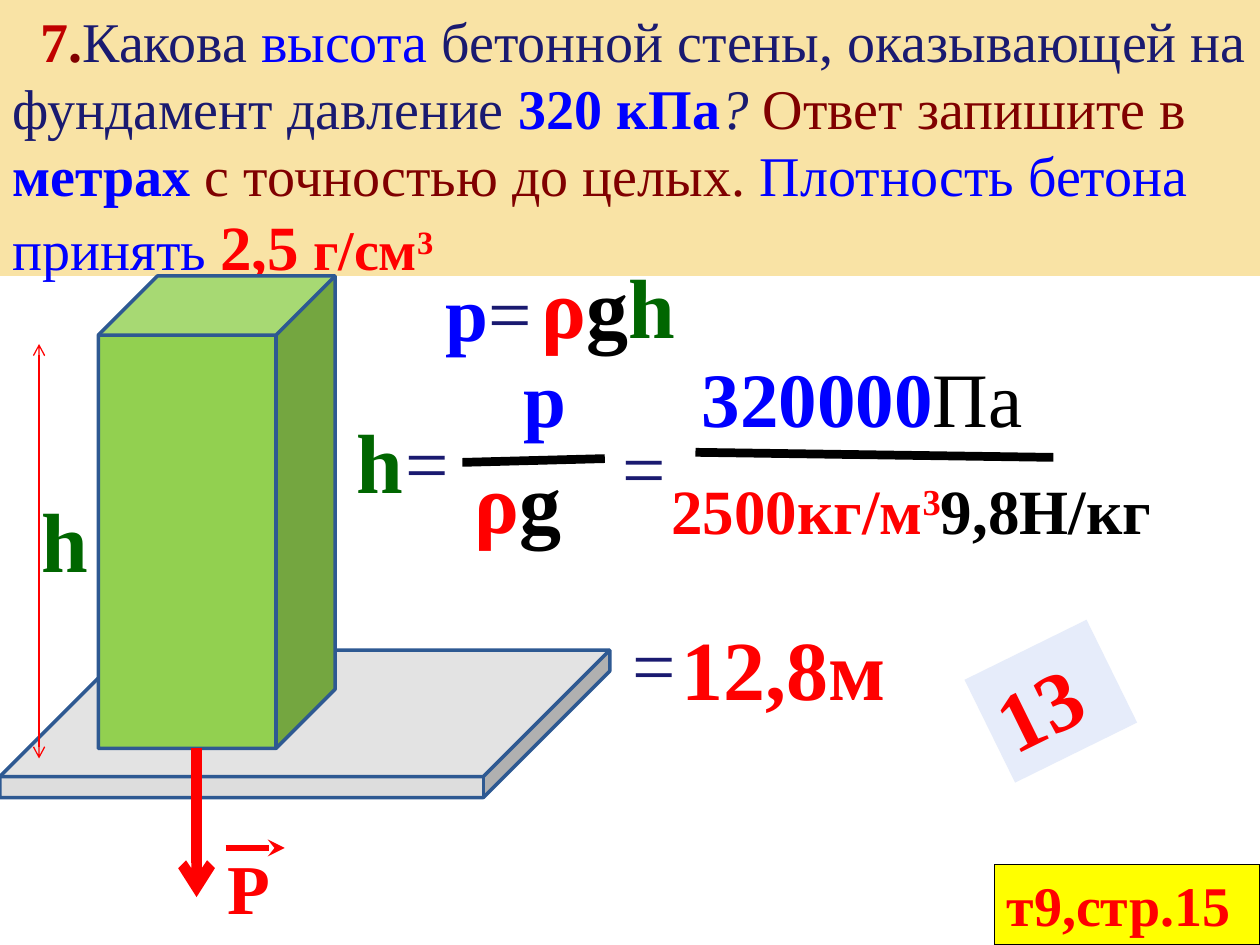
from lxml import etree
from pptx import Presentation
from pptx.dml.color import RGBColor
from pptx.enum import shapes, text
from pptx.oxml.ns import qn
from pptx.util import Inches, Pt

FONT = "Times New Roman"
RED = RGBColor(0xFF, 0x00, 0x00)
DARK_RED = RGBColor(0xC0, 0x00, 0x00)
MAROON = RGBColor(0x80, 0x00, 0x00)
BLUE = RGBColor(0x00, 0x00, 0xFF)
NAVY = RGBColor(0x1A, 0x1A, 0x70)
GREEN = RGBColor(0x00, 0x66, 0x00)
BLACK = RGBColor(0x00, 0x00, 0x00)
SAND = RGBColor(0xF9, 0xE3, 0xA5)
GREY = RGBColor(0xDD, 0xDD, 0xDD)
LIME = RGBColor(0x92, 0xD0, 0x50)
STEEL = RGBColor(0x2E, 0x59, 0x92)
PALE_BLUE = RGBColor(0xE6, 0xEC, 0xFA)
YELLOW = RGBColor(0xFF, 0xFF, 0x00)


def fill_text(shape, runs, size, anchor=text.MSO_ANCHOR.TOP):
    frame = shape.text_frame
    frame.word_wrap = True
    frame.vertical_anchor = anchor
    paragraph = frame.paragraphs[0]
    paragraph.alignment = text.PP_ALIGN.LEFT
    paragraph.font.name = FONT
    paragraph.font.size = Pt(size)
    for words, color, style in runs:
        run = paragraph.add_run()
        run.text = words
        run.font.name = FONT
        run.font.size = Pt(36 if "large" in style else size)
        run.font.color.rgb = color
        run.font.bold = "bold" in style
        run.font.italic = "italic" in style
        if "super" in style:
            run.font._element.set("baseline", "30000")
    return paragraph


def add_label(parent, left, top, width, height, size, *runs):
    box = parent.add_textbox(Inches(left), Inches(top), Inches(width), Inches(height))
    box.text_frame.auto_size = text.MSO_AUTO_SIZE.SHAPE_TO_FIT_TEXT
    return fill_text(box, runs, size)


def add_block(parent, kind, left, top, width, height, fill, line=None, weight=0.75):
    shape = parent.add_shape(
        kind, Inches(left), Inches(top), Inches(width), Inches(height))
    shape.shadow.inherit = False
    shape.fill.solid()
    shape.fill.fore_color.rgb = fill
    if line is None:
        shape.line.fill.background()
    else:
        shape.line.color.rgb = line
        shape.line.width = Pt(weight)
    return shape


def add_line(parent, x1, y1, x2, y2, color, weight, head=None, tail=None):
    line = parent.add_connector(
        shapes.MSO_CONNECTOR.STRAIGHT, Inches(x1), Inches(y1), Inches(x2), Inches(y2))
    line.line.color.rgb = color
    line.line.width = Pt(weight)
    properties = line._element.spPr
    outline = properties.find(qn("a:ln"))
    for tag, arrow in (("a:headEnd", head), ("a:tailEnd", tail)):
        if arrow:
            etree.SubElement(outline, qn(tag)).set("type", arrow)
    etree.SubElement(properties, qn("a:effectLst"))


def add_question(parent):
    banner = add_block(parent, shapes.MSO_SHAPE.RECTANGLE, 0, 0, 10, 2.19, SAND)
    paragraph = fill_text(banner, [
        ("  ", BLUE, ""),
        ("7", DARK_RED, "bold"),
        (".", MAROON, "bold"),
        ("Какова ", NAVY, ""),
        ("высота ", BLUE, ""),
        ("бетонной стены, оказывающей на фундамент давление ", NAVY, ""),
        ("320 кПа", BLUE, "bold"),
        ("?", NAVY, "italic"),
        (" Ответ запишите в", MAROON, ""),
        (" метрах", BLUE, "bold"),
        (" с точностью до целых.", MAROON, ""),
        (" Плотность бетона принять ", BLUE, ""),
        ("2,5", RED, "bold large"),
        (" ", RED, ""),
        ("г/см", RED, "bold"),
        ("3", RED, "bold super"),
    ], 32)
    paragraph.space_before = Pt(5)
    paragraph.space_after = Pt(10)


def add_wall(parent):
    cube = shapes.MSO_SHAPE.CUBE
    slab = add_block(parent, cube, 0, 5.16, 4.84, 1.17, GREY, STEEL, 2)
    slab.adjustments[0] = 0.858
    add_block(parent, cube, 0.78, 2.19, 1.88, 3.75, LIME, STEEL, 2)
    add_line(parent, 1.56, 5.94, 1.56, 7.12, RED, 6, tail="arrow")
    force = parent.add_group_shape().shapes
    add_label(force, 1.71, 6.65, 0.86, 0.77, 40, ("Р", RED, "bold")).space_after = Pt(10)
    add_line(force, 1.79, 6.73, 2.26, 6.73, RED, 3.25, tail="stealth")
    add_line(parent, 0.31, 2.73, 0.31, 6.02, RED, 0.75, "arrow", "arrow")
    add_label(parent, 0.23, 3.83, 0.78, 0.91, 48, ("h", GREEN, "bold"))


def add_solution(parent):
    pressure = ("p", BLUE, "bold")
    density = ("ρ", RED, "bold")
    gravity = ("g", BLACK, "bold")
    height = ("h", GREEN, "bold")
    equals = ("=", NAVY, "")

    add_label(parent, 3.44, 2.05, 1.02, 0.84, 44, pressure, equals)
    add_label(parent, 4.2, 1.97, 1.41, 0.91, 48, density, gravity, height)
    for left, top in ((3.12, 3.24), (4.84, 3.28), (4.92, 4.84)):
        add_label(parent, left, top, 0.63, 0.84, 44, equals)
    add_label(parent, 2.73, 3.2, 0.94, 0.91, 48, height)
    add_label(parent, 4.06, 2.73, 1.02, 0.84, 44, pressure)
    add_line(parent, 3.67, 3.67, 4.8, 3.64, BLACK, 5)
    add_label(parent, 3.67, 3.52, 1.09, 0.91, 48, density, gravity)
    add_label(parent, 5.47, 2.73, 3.2, 0.84, 44,
              ("320000", BLUE, "bold"), ("Па", BLACK, ""))
    add_line(parent, 5.52, 3.59, 8.36, 3.63, BLACK, 5)
    add_label(parent, 5.23, 3.69, 4.3, 0.71, 36, ("2500кг/м", RED, "bold"),
              ("3", RED, "bold super"), ("9,8Н/кг", BLACK, "bold"))
    add_label(parent, 5.31, 4.84, 2.03, 0.91, 48, ("12,8м", RED, "bold"))


def add_answer(parent):
    rectangle = shapes.MSO_SHAPE.RECTANGLE
    answer = add_block(parent, rectangle, 7.8, 5.11, 1.08, 0.91, PALE_BLUE)
    answer.rotation = 333.8
    fill_text(answer, [("13", RED, "bold")], 48)
    reference = add_block(parent, rectangle, 7.89, 6.86, 2.11, 0.64, YELLOW, BLACK)
    fill_text(reference, [("т9,стр.15", RED, "bold")], 32)


def main():
    presentation = Presentation()
    presentation.slide_width = Inches(10)
    presentation.slide_height = Inches(7.5)
    slide = presentation.slides.add_slide(presentation.slide_layouts[6])
    add_question(slide.shapes)
    add_wall(slide.shapes)
    add_solution(slide.shapes)
    add_answer(slide.shapes)
    presentation.save("out.pptx")


if __name__ == "__main__":
    main()
